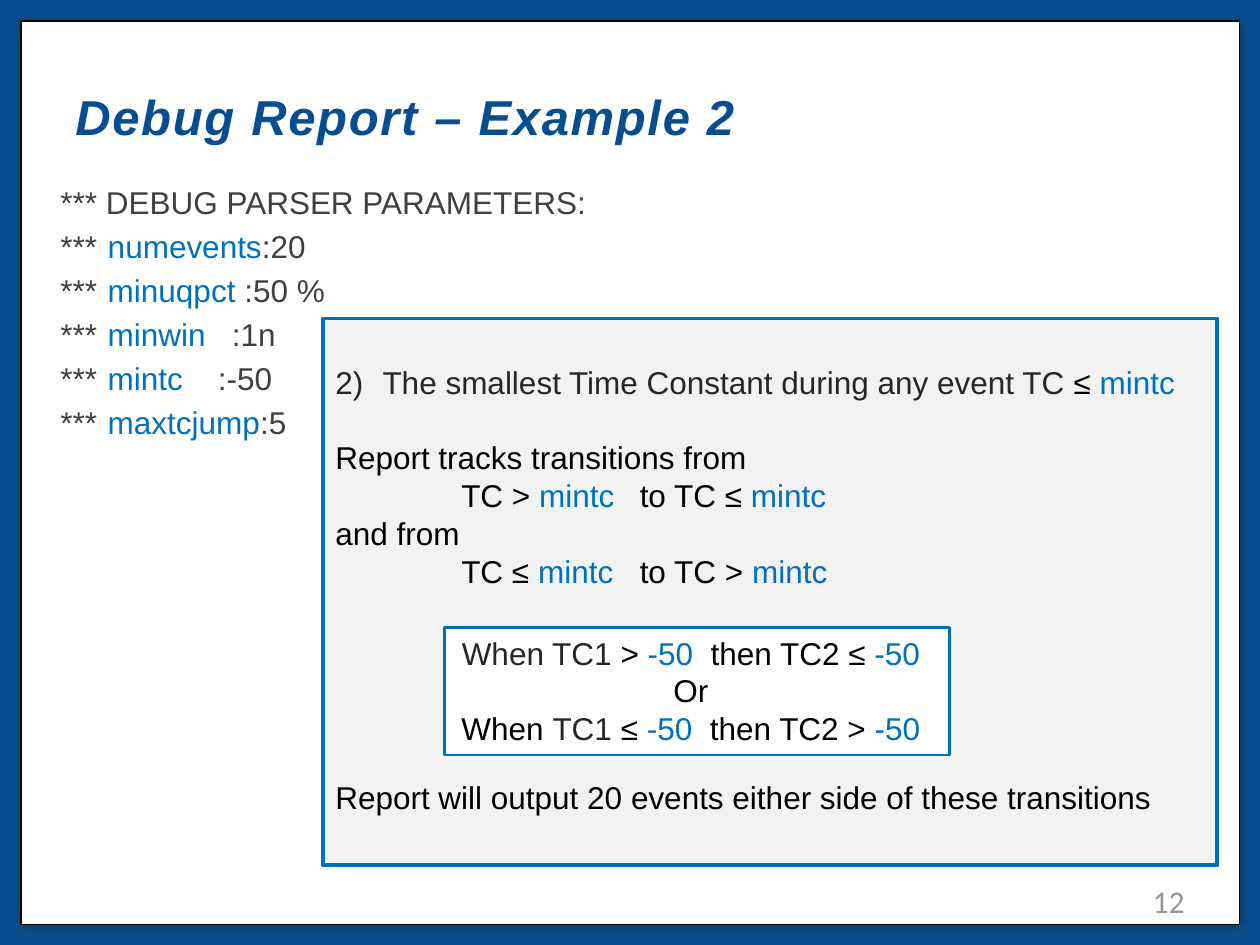
from lxml import etree
from pptx import Presentation
from pptx.dml.color import RGBColor
from pptx.enum import shapes, text
from pptx.oxml import ns
from pptx.util import Pt

BLUE, NAVY, BLACK = "0070C0", "084D8F", "000000"
DARK, GREY, WHITE = "262626", "404040", "FFFFFF"
LINE = 21.6
INDENT = 27
LEFT, CENTER, RIGHT = (text.PP_ALIGN.LEFT, text.PP_ALIGN.CENTER,
                       text.PP_ALIGN.RIGHT)


def color(code):
    return RGBColor.from_string(code)


def sub(node, tag, **attrs):
    return etree.SubElement(node, ns.qn(tag), attrs)


def rect(slide, box, fill, line=None, width=1):
    shape = slide.shapes.add_shape(shapes.MSO_SHAPE.RECTANGLE, *map(Pt, box))
    shape.shadow.inherit = False
    shape.fill.solid()
    shape.fill.fore_color.rgb = color(fill)
    if line:
        shape.line.color.rgb = color(line)
        shape.line.width = Pt(width)
    else:
        shape.line.fill.background()
    return shape


def soften(shape, alpha, radius):
    """Make the fill translucent and blur the edge."""
    props = shape._element.spPr
    tint = props.find(ns.qn("a:solidFill"))[0]
    sub(tint, "a:alpha", val=str(alpha * 1000))
    sub(props.find(ns.qn("a:effectLst")), "a:softEdge", rad=str(Pt(radius)))


def area(slide, box):
    return slide.shapes.add_textbox(*map(Pt, box))


def hang(para):
    props = para._p.get_or_add_pPr()
    props.set("marL", str(Pt(INDENT)))
    props.set("indent", str(-Pt(INDENT)))
    return props


def number(para, start):
    props = hang(para)
    sub(props, "a:buFont", typeface="Arial")
    sub(props, "a:buAutoNum", type="arabicParenR", startAt=str(start))


def tabs(para, stops):
    group = sub(para._p.get_or_add_pPr(), "a:tabLst")
    for stop in stops:
        sub(group, "a:tab", pos=str(Pt(stop)), algn="l")


def write(para, parts, size=18, face="Arial", align=LEFT):
    """Add (wording, colour) runs to a paragraph."""
    para.alignment = align
    for words, code in parts:
        run = para.add_run()
        run.text = words
        run.font.size = Pt(size)
        run.font.name = face
        run.font.color.rgb = color(code)


def lines(shape, rows, align=LEFT, gap=0):
    """Write rows of runs at an even pitch and return the paragraphs."""
    frame = shape.text_frame
    frame.word_wrap = True
    frame.vertical_anchor = text.MSO_ANCHOR.TOP
    paras = []
    for i, row in enumerate(rows):
        para = frame.add_paragraph() if i else frame.paragraphs[0]
        para.line_spacing = Pt(LINE)
        para.space_before = Pt(gap if i else 0)
        write(para, row, align=align)
        paras.append(para)
    return paras


def label(slide, box, words, code, size, face, align=LEFT):
    frame = area(slide, box).text_frame
    frame.word_wrap = True
    frame.vertical_anchor = text.MSO_ANCHOR.MIDDLE
    write(frame.paragraphs[0], [(words, code)], size, face, align)
    return frame.paragraphs[0].runs[0]


def border(slide):
    rect(slide, (0, 0, 720, 540), NAVY)
    soften(rect(slide, (5, 5, 713, 533), DARK, "3A5F8C", 2), 60, 8)
    rect(slide, (12, 12, 696.5, 516.5), WHITE, BLACK, 0.75)


def params(slide):
    pairs = [("numevents", ":20"), ("minuqpct", " :50 %"),
             ("minwin", "   :1n"), ("mintc", "    :-50"),
             ("maxtcjump", ":5")]
    rows = [[("*** DEBUG PARSER PARAMETERS:", GREY)]]
    rows += [[("***\t", GREY), (name, BLUE), (value, GREY)]
             for name, value in pairs]
    for para in lines(area(slide, (27.5, 101, 648, 343)), rows, gap=3.6):
        hang(para)


def panel(slide):
    shape = rect(slide, (184.5, 182, 511, 312.5), "F2F2F2", BLUE, 2.25)
    shape.text_frame.margin_top = Pt(3.6 + LINE)

    def change(first, second):
        return [(f"\tTC {first} ", BLACK), ("mintc", BLUE),
                (f"\tto TC {second} ", BLACK), ("mintc", BLUE)]

    rows = [
        [("The smallest Time Constant during any event TC ", DARK),
         ("≤ ", BLACK), ("mintc", BLUE)],
        [("Report tracks transitions from", BLACK)],
        change(">", "≤"),
        [("and from", BLACK)],
        change("≤", ">"),
        [("Report will output 20 events either side of these transitions",
          BLACK)],
    ]
    paras = lines(shape, rows)
    number(paras[0], 2)
    for i in (2, 4):
        tabs(paras[i], (72, 174))
    paras[1].space_before = Pt(LINE)
    paras[5].space_before = Pt(5 * LINE)


def cases(slide):
    shape = rect(slide, (254, 358.5, 288.5, 73), WHITE, BLUE, 1.5)
    shape.text_frame.margin_right = Pt(14)

    def case(first, second, code):
        return [("When ", code), ("TC1 ", DARK), (f"{first} ", BLACK),
                ("-50", BLUE), (" ", BLUE), (f"then TC2 {second} ", BLACK),
                ("-50", BLUE)]

    rows = [case(">", "≤", DARK), [("Or", BLACK)], case("≤", ">", BLACK)]
    paras = lines(shape, rows, CENTER)
    for i in (0, 2):
        paras[i].runs[4].font._element.set("spc", "500")
    shape.text_frame.word_wrap = False


def main():
    deck = Presentation()
    deck.slide_width, deck.slide_height = Pt(720), Pt(540)
    slide = deck.slides.add_slide(deck.slide_layouts[6])
    border(slide)
    label(slide, (516, 500.5, 168, 29), "12", "969696", 18, "Calibri", RIGHT)
    title = label(slide, (36, 21.5, 648, 90), "Debug Report – Example 2",
                  NAVY, 28, "Arial")
    title.font.bold = title.font.italic = True
    title.font._element.set("spc", "100")
    params(slide)
    panel(slide)
    cases(slide)
    deck.save("out.pptx")


if __name__ == "__main__":
    main()
